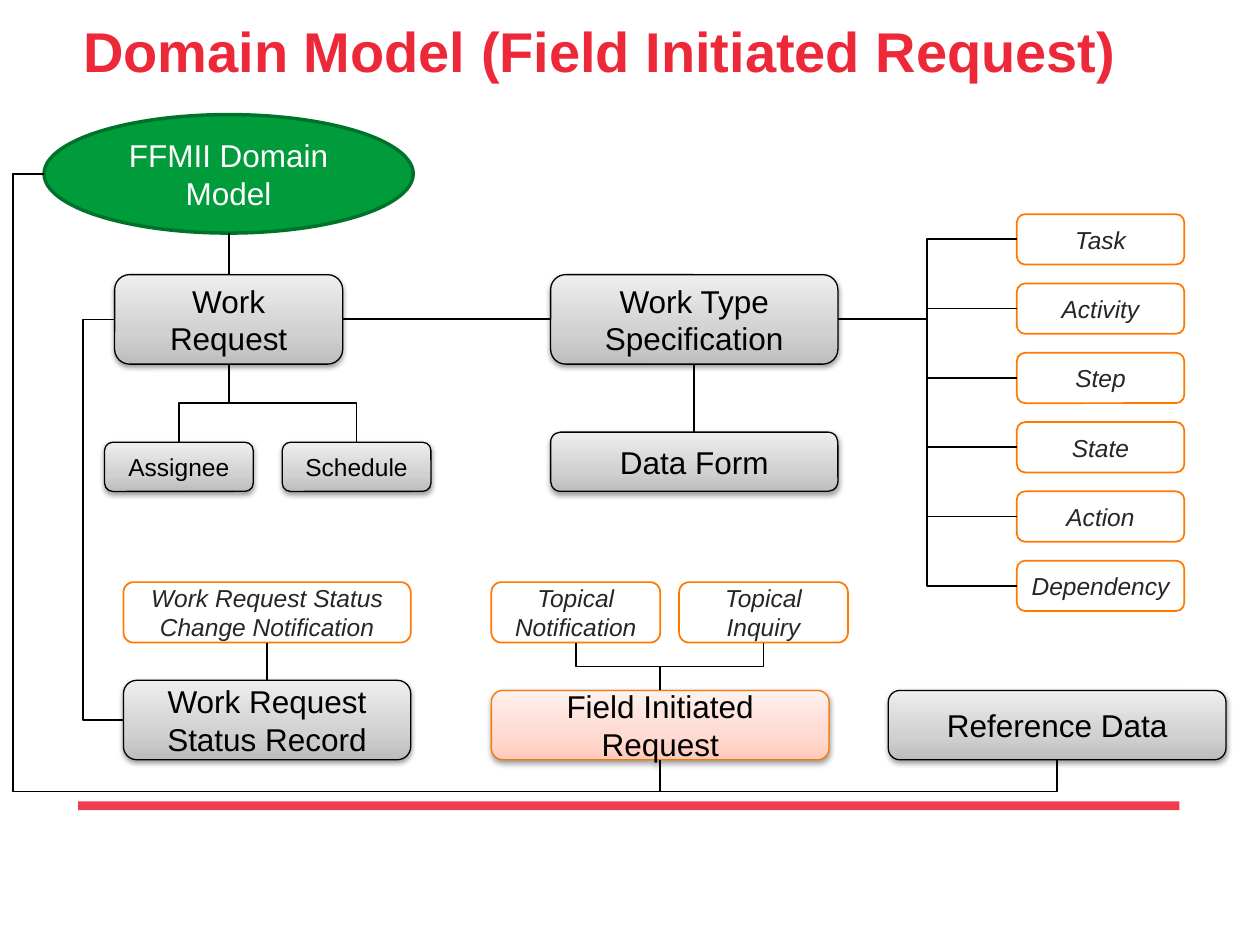
from lxml import etree
from pptx import Presentation
from pptx.dml.color import RGBColor
from pptx.enum.shapes import MSO_CONNECTOR, MSO_SHAPE
from pptx.enum.text import MSO_ANCHOR, PP_ALIGN
from pptx.oxml import parse_xml
from pptx.oxml.ns import nsdecls, qn
from pptx.util import Inches, Pt

STRAIGHT, ELBOW = MSO_CONNECTOR.STRAIGHT, MSO_CONNECTOR.ELBOW
RECTANGLE, ROUNDED, OVAL = MSO_SHAPE.RECTANGLE, MSO_SHAPE.ROUNDED_RECTANGLE, MSO_SHAPE.OVAL
CENTER, LEFT_ALIGN = PP_ALIGN.CENTER, PP_ALIGN.LEFT
MIDDLE = MSO_ANCHOR.MIDDLE
TOP, LEFT, BOTTOM, RIGHT = range(4)  # connection sites of a rectangle

FONT = "Arial"
COLORS = {"red": "ED2939", "green": "009B3A", "dark green": "00732B", "black": "000000",
          "white": "FFFFFF", "text": "262626", "orange": "FF7900", "deep orange": "F97600"}
GREY_STOPS = [(0, "BDBDBD"), (35, "D1D1D1"), (100, "EEEEEE")]
PINK_STOPS = [(0, "FFCBBD"), (35, "FFDAD1"), (100, "FFF1EE")]

# style: preset, fill (colour or gradient stops), line, line width, font size, font colour,
# italic, side margin
STYLES = {
    "root": (OVAL, "green", "dark green", 2, 18, "white", False, 0.1),
    "entity": (ROUNDED, GREY_STOPS, "black", 0.75, 18, "black", False, 0.1),
    "detail": (ROUNDED, GREY_STOPS, "black", 0.75, 14, "black", False, 0.1),
    "focus": (ROUNDED, PINK_STOPS, "deep orange", 0.75, 18, "black", False, 0.1),
    "item": (ROUNDED, "white", "orange", 1, 14, "text", True, 0.1),
    "part": (ROUNDED, "white", "orange", 1, 14, "text", True, 0.04),
}

TITLE = "Domain Model (Field Initiated Request)"
ROOT, REQUEST, TYPE = "FFMII Domain Model", "Work Request", "Work Type Specification"
FORM, RECORD, FIELD = "Data Form", "Work Request Status Record", "Field Initiated Request"
REFERENCE, CHANGE = "Reference Data", "Work Request Status Change Notification"
PARTS = ["Task", "Activity", "Step", "State", "Action", "Dependency"]
PARTS_LEFT, PARTS_TOP, PARTS_PITCH, PARTS_SIZE = 8.07, 1.7, 0.55, (1.33, 0.4)
DETAILS = ["Assignee", "Schedule"]
TOPICS = ["Topical Notification", "Topical Inquiry"]

NODES = [
    (ROOT, "root", 0.35, 0.91, 2.93, 0.94),
    (REQUEST, "entity", 0.91, 2.18, 1.81, 0.71),
    (TYPE, "entity", 4.37, 2.18, 2.28, 0.71),
    (FORM, "entity", 4.37, 3.43, 2.28, 0.47),
    (RECORD, "entity", 0.98, 5.4, 2.28, 0.63),
    (FIELD, "focus", 3.9, 5.48, 2.68, 0.55),
    (REFERENCE, "entity", 7.05, 5.48, 2.68, 0.55),
    (CHANGE, "item", 0.98, 4.62, 2.28, 0.48),
]
NODES += [(name, "detail", 0.83 + 1.41 * i, 3.51, 1.18, 0.39) for i, name in enumerate(DETAILS)]
NODES += [(name, "item", 3.9 + 1.49 * i, 4.62, 1.34, 0.48) for i, name in enumerate(TOPICS)]
NODES += [(name, "part", PARTS_LEFT, PARTS_TOP + PARTS_PITCH * i, *PARTS_SIZE)
          for i, name in enumerate(PARTS)]

# from, site, to, site, lanes the line runs along outside the two nodes
LINKS = [
    (ROOT, BOTTOM, REQUEST, TOP, ()),
    (REQUEST, RIGHT, TYPE, LEFT, ()),
    (TYPE, BOTTOM, FORM, TOP, ()),
    (CHANGE, BOTTOM, RECORD, TOP, ()),
    (REQUEST, LEFT, RECORD, LEFT, (0.66,)),
    (ROOT, LEFT, FIELD, BOTTOM, (0.1, 6.28)),
    (ROOT, LEFT, REFERENCE, BOTTOM, (0.1, 6.28)),
]
LINKS += [(REQUEST, BOTTOM, name, TOP, ()) for name in DETAILS]
LINKS += [(FIELD, TOP, name, BOTTOM, ()) for name in TOPICS]
LINKS += [(TYPE, RIGHT, name, LEFT, ()) for name in PARTS]


def rgb(name):
    return RGBColor.from_string(COLORS[name])


def fill_gradient(shape, stops):
    """Fill with stops running from the bottom up, and add a soft shadow below."""
    marks = "".join(f'<a:gs pos="{share * 1000}"><a:srgbClr val="{color}"/></a:gs>'
                    for share, color in stops)
    properties = shape._element.spPr
    properties.find(qn("a:prstGeom")).addnext(parse_xml(
        f'<a:gradFill {nsdecls("a")} rotWithShape="1"><a:gsLst>{marks}</a:gsLst>'
        '<a:lin ang="16200000" scaled="0"/></a:gradFill>'))
    properties.find(qn("a:effectLst")).append(parse_xml(
        f'<a:outerShdw {nsdecls("a")} blurRad="40000" dist="20000" dir="5400000" '
        'rotWithShape="0"><a:srgbClr val="000000"><a:alpha val="38000"/>'
        '</a:srgbClr></a:outerShdw>'))


def write(shape, text, size, color, align):
    paragraph = shape.text_frame.paragraphs[0]
    paragraph.text = text
    paragraph.alignment = align
    font = paragraph.font
    font.name, font.size, font.color.rgb = FONT, Pt(size), rgb(color)
    return font


def add_node(slide, text, style, *box):
    preset, fill, line, width, size, color, italic, margin = STYLES[style]
    shape = slide.shapes.add_shape(preset, *map(Inches, box))
    shape.shadow.inherit = False
    if isinstance(fill, list):
        fill_gradient(shape, fill)
    else:
        shape.fill.solid()
        shape.fill.fore_color.rgb = rgb(fill)
    shape.line.color.rgb = rgb(line)
    shape.line.width = Pt(width)
    frame = shape.text_frame
    frame.vertical_anchor = MIDDLE
    frame.margin_left = frame.margin_right = Inches(margin)
    write(shape, text, size, color, CENTER).italic = italic
    return shape


def site_point(shape, site):
    x = shape.left + {LEFT: 0, RIGHT: shape.width}.get(site, shape.width // 2)
    y = shape.top + {TOP: 0, BOTTOM: shape.height}.get(site, shape.height // 2)
    return x, y


def bend(connector, start, end, vertical, lanes):
    """Turn an elbow to leave vertically if asked, and route it along the lanes."""
    dx, dy = end[0] - start[0], end[1] - start[1]
    width, height = (abs(dy), abs(dx)) if vertical else (abs(dx), abs(dy))
    connector.left = (start[0] + end[0] - width) // 2
    connector.top = (start[1] + end[1] - height) // 2
    connector.width, connector.height = width, height
    frame = connector._element.spPr.find(qn("a:xfrm"))
    if vertical:
        frame.set("rot", "5400000" if dy > 0 else "16200000")
        mirrored = dx * dy > 0
    else:
        mirrored = dy < 0
    frame.set("flipH", "0")
    frame.set("flipV", str(int(mirrored)))

    geometry = connector._element.spPr.find(qn("a:prstGeom"))
    geometry.set("prst", "bentConnector4" if len(lanes) == 2 else "bentConnector3")
    shares = [(Inches(lane) - origin) / length
              for lane, origin, length in zip(lanes, start, (dx, dy))] or [0.5]
    guides = geometry.find(qn("a:avLst"))
    for number, share in enumerate(shares, 1):
        etree.SubElement(guides, qn("a:gd"), name=f"adj{number}",
                         fmla=f"val {round(share * 100000)}")


def add_link(slide, nodes, source, source_site, target, target_site, lanes):
    start = site_point(nodes[source], source_site)
    end = site_point(nodes[target], target_site)
    vertical = source_site in (TOP, BOTTOM)
    across = 0 if vertical else 1
    straight = abs(start[across] - end[across]) < Inches(0.02)
    connector = slide.shapes.add_connector(STRAIGHT if straight else ELBOW, *start, *end)
    if source != ROOT:  # an oval numbers its sites differently
        connector.begin_connect(nodes[source], source_site)
        connector.end_connect(nodes[target], target_site)
    if not straight:
        bend(connector, start, end, vertical, lanes)
    connector.line.color.rgb = rgb("black")
    connector.line.width = Pt(1)
    etree.SubElement(connector._element.spPr, qn("a:effectLst"))


def add_frame(slide):
    """Add the title and the rule at the foot."""
    rule = slide.shapes.add_shape(RECTANGLE, *map(Inches, (0.62, 6.36, 8.74, 0.07)))
    rule.shadow.inherit = False
    rule.fill.solid()
    rule.fill.fore_color.rgb = rgb("red")
    color = rule._element.spPr.find(qn("a:solidFill"))[0]
    etree.SubElement(color, qn("a:alpha"), val="90000")
    rule.line.fill.background()

    title = slide.shapes.add_textbox(*map(Inches, (0.66, 0.13, 8.74, 0.71)))
    frame = title.text_frame
    frame.word_wrap = True
    frame.margin_left = frame.margin_right = frame.margin_top = frame.margin_bottom = 0
    write(title, TITLE, 32, "red", LEFT_ALIGN).bold = True


def main():
    presentation = Presentation()
    presentation.slide_width, presentation.slide_height = Inches(10), Inches(7.5)
    slide = presentation.slides.add_slide(presentation.slide_layouts[6])
    add_frame(slide)
    nodes = {node[0]: add_node(slide, *node) for node in NODES}
    for link in LINKS:
        add_link(slide, nodes, *link)
    presentation.save("out.pptx")


if __name__ == "__main__":
    main()
